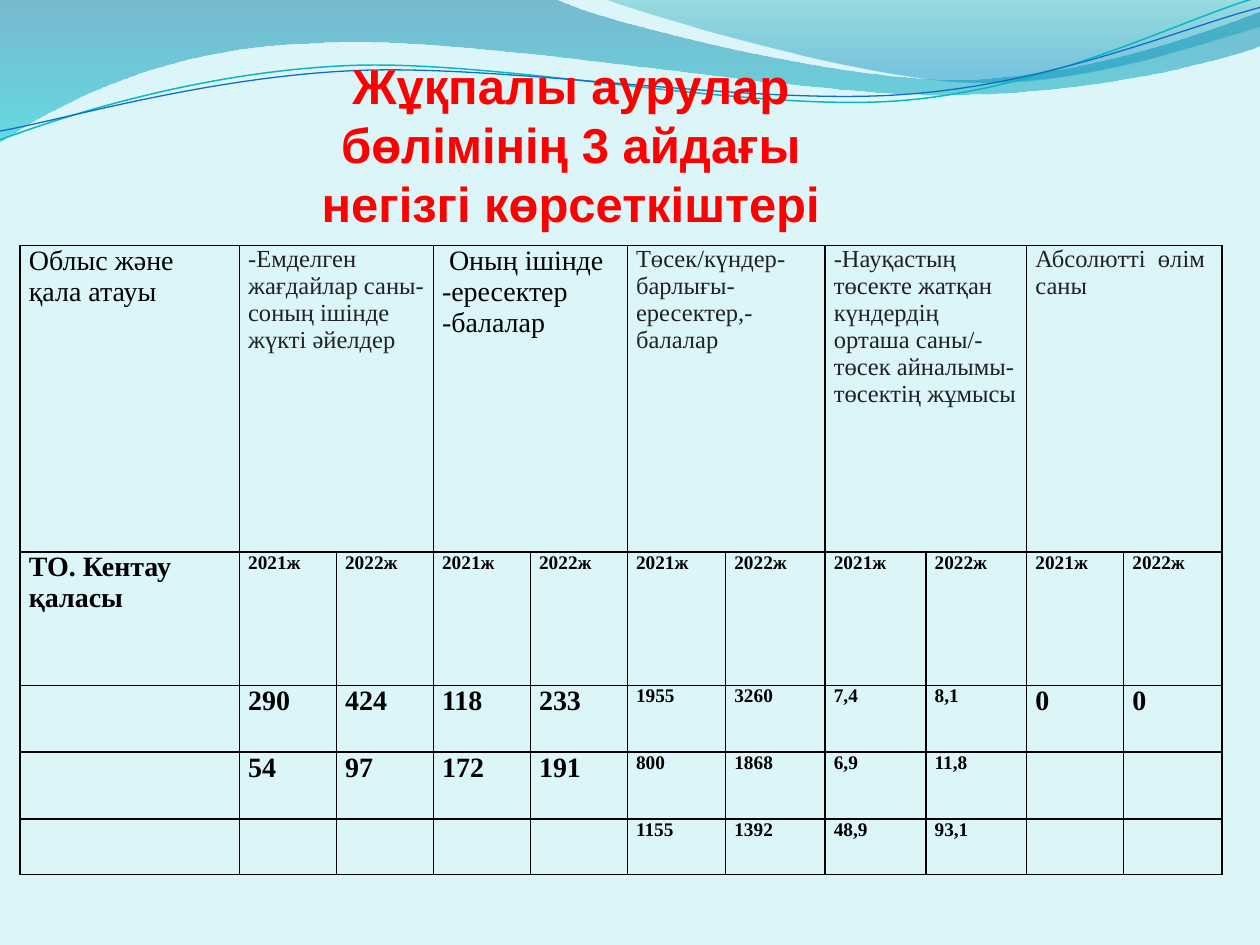
from math import cos, radians, sin

from lxml import etree
from pptx import Presentation
from pptx.dml.color import RGBColor
from pptx.enum.text import MSO_ANCHOR, MSO_AUTO_SIZE, PP_ALIGN
from pptx.oxml.ns import qn
from pptx.util import Inches, Pt

LEFT, CENTER = PP_ALIGN.LEFT, PP_ALIGN.CENTER
TOP = MSO_ANCHOR.TOP
GROW = MSO_AUTO_SIZE.SHAPE_TO_FIT_TEXT
BLACK, CHARCOAL, RED = "000000", "202124", "FF0000"
BACKGROUND = "DBF5F9"
SERIF, SANS = "Times New Roman", "Arial"
STRAND_TILT = 357.3

WAVES = [
    {"outline": [(0, 0), (4.4, -0.01), (4.76, 0.17, 6.64, 0.63, 7.58, 0.63),
                 (8.53, 0.63, 9.58, 0.26, 10, 0.09), (10.01, 0.36),
                 (9.83, 0.44, 8.7, 0.76, 7.46, 0.75),
                 (6.22, 0.75, 3.82, 0.28, 2.57, 0.34),
                 (1.29, 0.36, 0.46, 0.83, -0.01, 1.13)],
     "stops": [(0, "0074A1", 45), (1, "00C6CF", 55)]},
    {"outline": [(4.79, -0.01), (5.09, 0.11, 6.82, 0.62, 7.69, 0.65),
                 (8.56, 0.69, 9.61, 0.32, 10, 0.21), (10, 0)],
     "stops": [(0, "00A1A9", 30), (0.8, "008BBF", 45)]},
]
STRANDS = [
    {"outline": [(0, 1.11), (0.48, 0.93, 1.58, 0.57, 2.77, 0.52),
                 (3.95, 0.47, 5.93, 0.89, 7.13, 0.8),
                 (8.33, 0.71, 9.38, 0.15, 9.98, -0.02)],
     "pivot": (4.99, 0.58), "color": "0AB8BF", "width": 0.85},
    {"outline": [(0, 1.04), (0.47, 0.96, 1.64, 0.61, 2.83, 0.56),
                 (4.03, 0.51, 5.97, 0.84, 7.17, 0.75),
                 (8.36, 0.67, 9.41, 0.21, 10, 0.06)],
     "pivot": (5, 0.59), "color": "0F6FC6", "width": 0.75},
]

TITLE = "Жұқпалы аурулар бөлімінің 3 айдағы негізгі көрсеткіштері"
REGION_HEADING = "Облыс және қала атауы"
REGION = "ТО. Кентау  қаласы"
INDICATORS = [
    ("-Емделген жағдайлар саны- соның ішінде жүкті әйелдер", 14, CHARCOAL, ""),
    (" Оның ішінде \n-ересектер\n-балалар ", 16, BLACK, ""),
    ("Төсек/күндер- барлығы- ересектер,- балалар", 14, CHARCOAL, " "),
    ("-Науқастың төсекте жатқан күндердің орташа саны/- төсек айналымы- "
     "төсектің жұмысы", 14, CHARCOAL, " "),
    ("Абсолютті  өлім саны", 14, CHARCOAL, " "),
]
YEARS = ["2021ж", "2022ж"]
FIGURES = [
    ["290", "424", "118", "233", "1955", "3260 ", "7,4", "8,1", "0", "0"],
    ["54", "97", "172", "191", "800", "1868 ", "6,9", "11,8", "", ""],
    ["", "", "", "", "1155", "1392", "48,9", "93,1", "", ""],
]
FIGURE_SIZES = [16] * 4 + [11] * 4 + [16] * 2
COLUMN_WIDTHS = [1.74, 0.77, 0.77, 0.77, 0.77, 0.78, 0.79, 0.8, 0.8, 0.77, 0.78]
ROW_HEIGHTS = [2.43, 1.06, 0.53, 0.53, 0.44]
CELL_FORMAT = {"margin_left": Inches(0.07), "margin_right": Inches(0.07),
               "margin_top": 0, "margin_bottom": 0, "vertical_anchor": TOP}


def rgb(value):
    """Turn a hex string into a colour."""
    return RGBColor.from_string(value)


def apply_format(target, values):
    """Set every attribute named in values on target."""
    for name, value in values.items():
        setattr(target, name, value)


def add_run(paragraph, text, color, **font):
    """Append formatted text to a paragraph."""
    run = paragraph.add_run()
    run.text = text
    apply_format(run.font, font)
    run.font.color.rgb = rgb(color)


def write(frame, text, align, color, **font):
    """Fill a text frame, one paragraph per line of text."""
    for index, line in enumerate(text.split("\n")):
        paragraph = frame.add_paragraph() if index else frame.paragraphs[0]
        paragraph.alignment = align
        add_run(paragraph, line, color, **font)


def level(point, pivot):
    """Undo the strand tilt of a point around its pivot."""
    angle = radians(-STRAND_TILT)
    x, y = point[0] - pivot[0], point[1] - pivot[1]
    return (pivot[0] + x * cos(angle) - y * sin(angle),
            pivot[1] + x * sin(angle) + y * cos(angle))


def add_outline(slide, left, top, outline, close, pivot=None):
    """Draw corners and cubic curves with their origin at left and top."""
    points = [pair for segment in outline for pair in zip(segment[::2], segment[1::2])]
    if pivot:
        points = [level(point, pivot) for point in points]
    points = [(Inches(left + x), Inches(top + y)) for x, y in points]
    builder = slide.shapes.build_freeform(*points[0])
    builder.add_line_segments(points[1:], close=close)
    shape = builder.convert_to_shape()
    shape.shadow.inherit = False
    if pivot:
        shape.rotation = STRAND_TILT
    lines = iter(list(shape.element.iter(qn("a:lnTo"))))
    for segment in outline[1:]:
        line = next(lines)
        if len(segment) == 6:
            line.addprevious(curve := etree.Element(qn("a:cubicBezTo")))
            for part in (line, next(lines), next(lines)):
                curve.append(part[0])
                part.getparent().remove(part)
    return shape


def add_wave_band(slide, left, top):
    """Draw the translucent waves and the thin strands over them."""
    for wave in WAVES:
        shape = add_outline(slide, left, top, wave["outline"], True)
        shape.line.fill.background()
        shape.fill.gradient()
        shape.fill.gradient_angle = 270
        for stop, (position, color, _) in zip(shape.fill.gradient_stops, wave["stops"]):
            stop.position = position
            stop.color.rgb = rgb(color)
        for node, (_, _, opacity) in zip(shape.element.iter(qn("a:srgbClr")), wave["stops"]):
            etree.SubElement(node, qn("a:alpha"), val=str(opacity * 1000))
    for strand in STRANDS:
        shape = add_outline(slide, left, top, strand["outline"], False, strand["pivot"])
        shape.fill.background()
        shape.line.color.rgb = rgb(strand["color"])
        shape.line.width = Pt(strand["width"])


def add_title(slide, left, top, width, height):
    """Place the red heading."""
    frame = slide.shapes.add_textbox(*map(Inches, (left, top, width, height))).text_frame
    apply_format(frame, {"word_wrap": True, "auto_size": GROW})
    write(frame, TITLE, CENTER, RED, size=Pt(28), bold=True, name=SANS)


def style_cell(cell):
    """Give a cell its margins, thin black borders and no fill."""
    apply_format(cell, CELL_FORMAT)
    properties = cell._tc.get_or_add_tcPr()
    for side in "LRTB":
        border = etree.SubElement(properties, qn(f"a:ln{side}"), w=str(Pt(1)))
        solid = etree.SubElement(border, qn("a:solidFill"))
        etree.SubElement(solid, qn("a:srgbClr"), val=BLACK)
    cell.fill.background()


def add_indicator_table(slide, left, top, width, height):
    """Place the table of indicators by year."""
    table = slide.shapes.add_table(len(ROW_HEIGHTS), len(COLUMN_WIDTHS),
                                   *map(Inches, (left, top, width, height))).table
    apply_format(table, {"first_row": False, "horz_banding": False})
    for column, column_width in zip(table.columns, COLUMN_WIDTHS):
        column.width = Inches(column_width)
    for row, row_height in zip(table.rows, ROW_HEIGHTS):
        row.height = Inches(row_height)
    for cell in table.iter_cells():
        style_cell(cell)

    def put(row, column, text, size, color=BLACK, bold=True):
        """Write one cell of the table and return its text frame."""
        frame = table.cell(row, column).text_frame
        write(frame, text, LEFT, color, size=Pt(size), bold=bold, name=SERIF)
        return frame

    put(0, 0, REGION_HEADING, 16, bold=False)
    put(1, 0, REGION, 16)
    for index, (heading, size, color, tail) in enumerate(INDICATORS):
        first = 1 + index * len(YEARS)
        table.cell(0, first).merge(table.cell(0, first + 1))
        frame = put(0, first, heading, size, color, bold=False)
        if tail:
            add_run(frame.paragraphs[0], tail, BLACK, size=Pt(11), bold=False, name=SERIF)
        for offset, year in enumerate(YEARS):
            put(1, first + offset, year, 11)
    for row, figures in enumerate(FIGURES, start=2):
        for column, (figure, size) in enumerate(zip(figures, FIGURE_SIZES), start=1):
            if figure:
                put(row, column, figure, size)


def main():
    """Build the slide and save it."""
    deck = Presentation()
    apply_format(deck, {"slide_width": Inches(10), "slide_height": Inches(7.5)})
    slide = deck.slides.add_slide(deck.slide_layouts[6])
    slide.background.fill.solid()
    slide.background.fill.fore_color.rgb = rgb(BACKGROUND)
    add_wave_band(slide, 0, 0)
    add_indicator_table(slide, 0.16, 1.95, sum(COLUMN_WIDTHS), sum(ROW_HEIGHTS))
    add_title(slide, 2.03, 0.39, 5, 1.51)
    deck.save("out.pptx")


if __name__ == "__main__":
    main()
